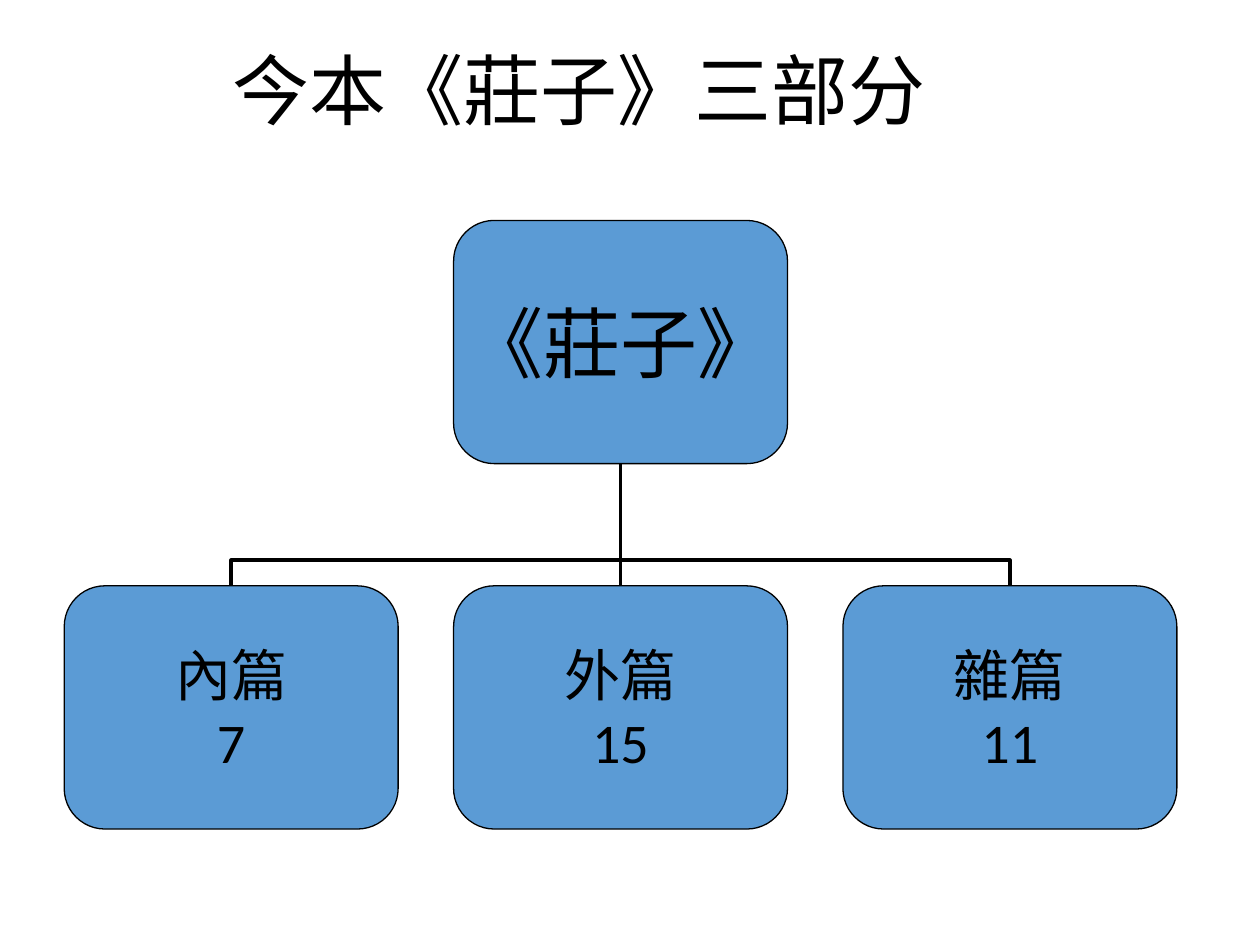
"""Build a slide showing the three parts of the Zhuangzi as a tree."""
from dataclasses import dataclass

from lxml.etree import SubElement
from pptx import Presentation
from pptx.dml.color import RGBColor
from pptx.enum.shapes import MSO_CONNECTOR, MSO_SHAPE
from pptx.enum.text import MSO_ANCHOR, PP_ALIGN
from pptx.oxml.ns import qn
from pptx.shapes.connector import Connector
from pptx.shapes.shapetree import GroupShapes
from pptx.text.text import TextFrame
from pptx.util import Inches, Pt

BLACK = RGBColor(0x00, 0x00, 0x00)
BLUE = RGBColor(0x5B, 0x9B, 0xD5)

BOX_W, BOX_H = 2.65, 1.93
LEFT, STEP = 0.51, 3.09
ROOT_TOP, PART_TOP = 1.75, 4.65
BEND = 20900
FRAME_FORMAT = {
    "margin_left": 0, "margin_top": 0, "margin_right": 0, "margin_bottom": 0,
    "word_wrap": False, "vertical_anchor": MSO_ANCHOR.MIDDLE,
}


@dataclass
class Node:
    """A box in the tree, placed by column."""
    lines: tuple[str, ...]
    column: int
    top: float
    size: int

    @property
    def left(self) -> float:
        return LEFT + self.column * STEP

    @property
    def center(self) -> float:
        return self.left + BOX_W / 2


ROOT = Node(("《莊子》",), 1, ROOT_TOP, 44)
PARTS = [
    Node(lines, column, PART_TOP, 32)
    for column, lines in enumerate([("內篇", "7"), ("外篇", "15"), ("雜篇", "11")])
]


def write_lines(tf: TextFrame, lines: tuple[str, ...], size: int, font: str) -> None:
    """Fill a text frame with centred black paragraphs."""
    for i, line in enumerate(lines):
        p = tf.paragraphs[0] if i == 0 else tf.add_paragraph()
        p.alignment = PP_ALIGN.CENTER
        r = p.add_run()
        r.text = line
        for name, value in {"size": Pt(size), "name": font}.items():
            setattr(r.font, name, value)
        r.font.color.rgb = BLACK


def add_node(shapes: GroupShapes, node: Node) -> None:
    """Draw a rounded box with its text."""
    sp = shapes.add_shape(
        MSO_SHAPE.ROUNDED_RECTANGLE,
        Inches(node.left), Inches(node.top), Inches(BOX_W), Inches(BOX_H),
    )
    sp.shadow.inherit = False
    sp.adjustments[0] = 0.167
    sp.fill.solid()
    sp.fill.fore_color.rgb = BLUE
    sp.line.color.rgb = BLACK
    sp.line.width = Pt(0.75)
    for name, value in FRAME_FORMAT.items():
        setattr(sp.text_frame, name, value)
    write_lines(sp.text_frame, node.lines, node.size, "Calibri")


def bend_connector(cxn: Connector, rotation: int) -> None:
    """Turn an elbow connector upright and place its bend."""
    cxn._element.spPr.find(qn("a:xfrm")).set("rot", str(rotation * 60000))
    geom = cxn._element.spPr.find(qn("a:prstGeom"))
    av = geom.find(qn("a:avLst"))
    if av is None:
        av = SubElement(geom, qn("a:avLst"))
    SubElement(av, qn("a:gd"), name="adj1", fmla=f"val {BEND}")


def add_link(shapes: GroupShapes, part: Node, root: Node) -> None:
    """Join the top of a part to the bottom of the root."""
    y1, y2 = part.top, root.top + BOX_H
    dx = part.center - root.center
    if part.column == root.column:
        kind, ends = MSO_CONNECTOR.STRAIGHT, (part.center, y1, root.center, y2)
    else:
        mid_x, mid_y = (part.center + root.center) / 2, (y1 + y2) / 2
        half_w, half_h = (y1 - y2) / 2, abs(dx) / 2
        side = 1 if dx > 0 else -1
        kind = MSO_CONNECTOR.ELBOW
        ends = (mid_x + side * half_w, mid_y - half_h,
                mid_x - side * half_w, mid_y + half_h)
    cxn = shapes.add_connector(kind, *(Inches(v) for v in ends))
    if kind == MSO_CONNECTOR.ELBOW:
        bend_connector(cxn, 90 if dx > 0 else 270)
    cxn.line.color.rgb = BLACK
    cxn.line.width = Pt(2.25)
    SubElement(cxn._element.spPr, qn("a:effectLst"))


def main() -> None:
    """Create and save the presentation."""
    prs = Presentation()
    prs.slide_width, prs.slide_height = Inches(10), Inches(7.5)
    s = prs.slides.add_slide(prs.slide_layouts[5])

    title = s.shapes.title
    place = {"left": 0.21, "top": 0.25, "width": 8.77, "height": 1}
    for name, value in place.items():
        setattr(title, name, Inches(value))
    title.text_frame.vertical_anchor = MSO_ANCHOR.MIDDLE
    write_lines(title.text_frame, ("今本《莊子》三部分",), 44, "Arial")
    title.text_frame.paragraphs[0].line_spacing = 0.9

    tree = s.shapes.add_group_shape().shapes
    for part in reversed(PARTS):
        add_link(tree, part, ROOT)
    for node in [ROOT, *PARTS]:
        add_node(tree, node)

    prs.save("out.pptx")


if __name__ == "__main__":
    main()
